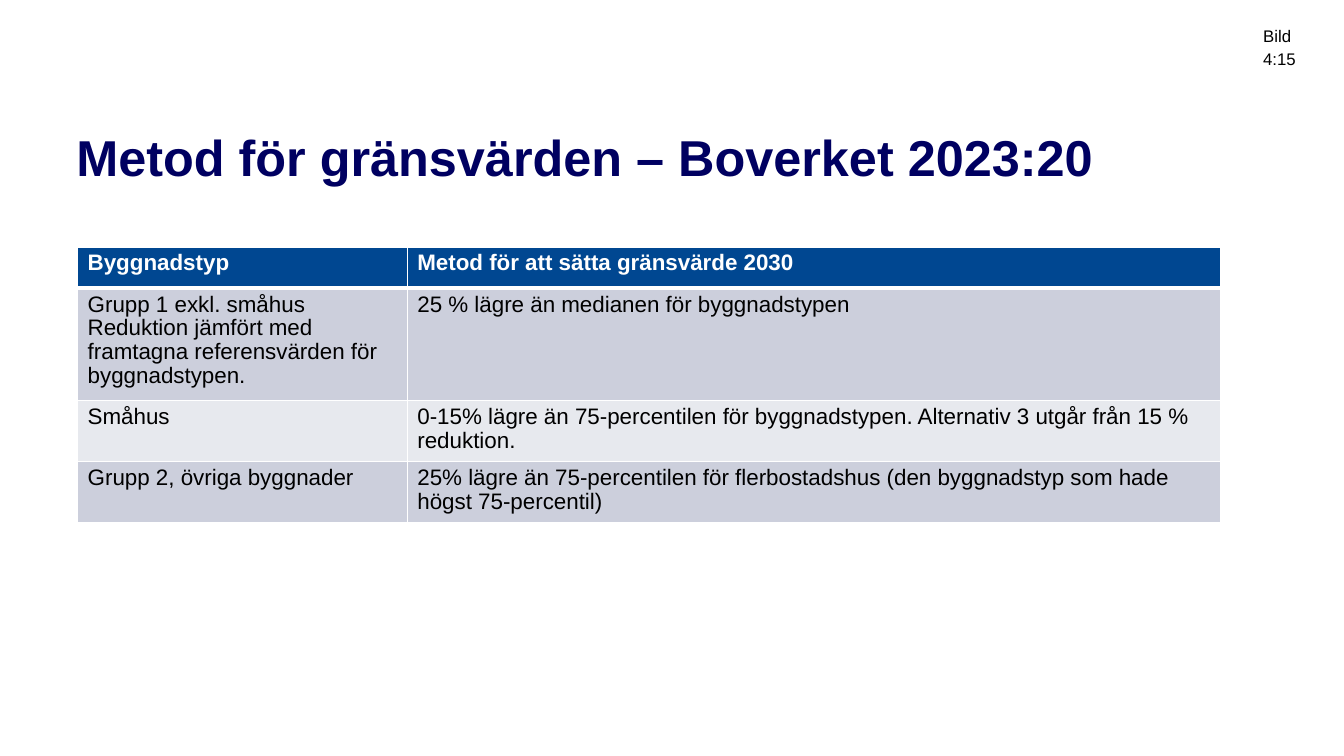
from dataclasses import dataclass

from lxml.etree import SubElement
from pptx import Presentation
from pptx.dml.color import RGBColor
from pptx.oxml.ns import qn
from pptx.util import Inches, Pt


@dataclass(frozen=True)
class Theme:
    font: str = "Arial"
    title: str = "000061"
    text: str = "000000"
    white: str = "FFFFFF"
    header: str = "004791"
    odd_row: str = "CCCFDC"
    even_row: str = "E7E9EE"
    title_size: int = 36
    table_size: int = 16
    label_size: int = 12


THEME = Theme()

ROWS = [
    ("Byggnadstyp", "Metod för att sätta gränsvärde 2030"),
    (
        "Grupp 1 exkl. småhus\nReduktion jämfört med framtagna referensvärden för byggnadstypen.",
        "25 % lägre än medianen för byggnadstypen",
    ),
    (
        "Småhus",
        "0-15% lägre än 75-percentilen för byggnadstypen. Alternativ 3 utgår från 15 % reduktion.",
    ),
    (
        "Grupp 2, övriga byggnader",
        "25% lägre än 75-percentilen för flerbostadshus (den byggnadstyp som hade högst 75-percentil)",
    ),
]
COLUMN_WIDTHS = (3.27, 8.07)
ROW_HEIGHTS = (0.41, 1.08, 0.59, 0.59)


def write_text(text_frame, text, size, color, bold=False, line_spacing=1.0):
    text_frame.text = text
    text_frame.word_wrap = True
    for paragraph in text_frame.paragraphs:
        paragraph.line_spacing = line_spacing
        for run in paragraph.runs:
            run.font.name = THEME.font
            run.font.size = Pt(size)
            run.font.bold = bold
            run.font.color.rgb = RGBColor.from_string(color)


def add_text(slide, left, top, width, height, text, size, color, **style):
    box = slide.shapes.add_textbox(Inches(left), Inches(top), Inches(width), Inches(height))
    write_text(box.text_frame, text, size, color, **style)
    return box


def set_borders(cell, bottom_width):
    properties = cell._tc.get_or_add_tcPr()
    widths = {"a:lnL": 1, "a:lnR": 1, "a:lnT": 1, "a:lnB": bottom_width}
    for tag, width in widths.items():
        line = SubElement(properties, qn(tag), w=str(Pt(width)))
        fill = SubElement(line, qn("a:solidFill"))
        SubElement(fill, qn("a:srgbClr"), val=THEME.white)


def style_cell(cell, text, row_index):
    is_header = row_index == 0
    band = THEME.odd_row if row_index % 2 else THEME.even_row
    set_borders(cell, 3 if is_header else 1)
    cell.fill.solid()
    cell.fill.fore_color.rgb = RGBColor.from_string(THEME.header if is_header else band)
    color = THEME.white if is_header else THEME.text
    write_text(cell.text_frame, text, THEME.table_size, color, bold=is_header, line_spacing=0.95)


def add_method_table(slide, left, top):
    frame = slide.shapes.add_table(
        len(ROWS), len(COLUMN_WIDTHS), Inches(left), Inches(top),
        Inches(sum(COLUMN_WIDTHS)), Inches(sum(ROW_HEIGHTS)),
    )
    table = frame.table
    for column, width in zip(table.columns, COLUMN_WIDTHS):
        column.width = Inches(width)
    for row_index, (texts, height) in enumerate(zip(ROWS, ROW_HEIGHTS)):
        table.rows[row_index].height = Inches(height)
        for column_index, text in enumerate(texts):
            style_cell(table.cell(row_index, column_index), text, row_index)


def main():
    presentation = Presentation()
    presentation.slide_width = Inches(13.33)
    presentation.slide_height = Inches(7.5)
    slide = presentation.slides.add_slide(presentation.slide_layouts[6])

    title = add_text(
        slide, 0.66, 1.2, 12.02, 0.62, "Metod för gränsvärden – Boverket 2023:20",
        THEME.title_size, THEME.title, bold=True, line_spacing=0.9,
    )
    title.text_frame.margin_top = Inches(0.12)
    add_method_table(slide, 0.77, 2.45)
    add_text(
        slide, 12.43, 0.19, 0.83, 0.3, "Bild 4:15",
        THEME.label_size, THEME.text, line_spacing=1.1,
    )
    presentation.save("out.pptx")


if __name__ == "__main__":
    main()
